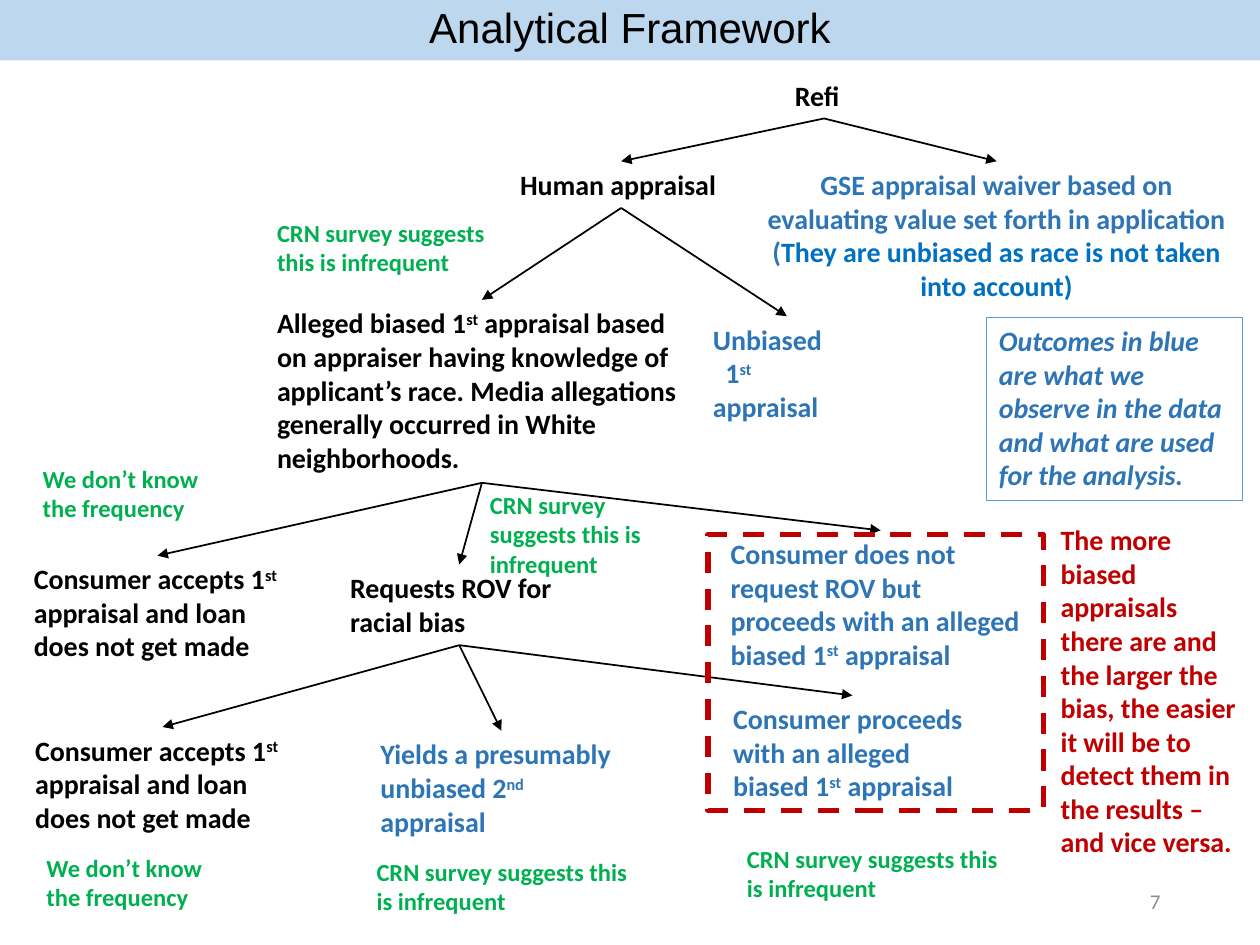
from lxml.etree import SubElement
from pptx import Presentation
from pptx.dml.color import RGBColor
from pptx.enum.dml import MSO_LINE
from pptx.enum.shapes import MSO_CONNECTOR, MSO_SHAPE
from pptx.enum.text import MSO_ANCHOR, MSO_AUTO_SIZE, PP_ALIGN
from pptx.oxml.ns import qn
from pptx.util import Inches, Pt

# Content. The grid has 100 columns and 75 rows of 0.1 inch.
COLUMNS, ROWS, CELL = 100, 75, 0.1
COLORS = {
    "band": "BDD7EE", "black": "000000", "blue": "2E75B6", "bright": "0070C0",
    "green": "00B050", "red": "C00000", "edge": "5B9BD5", "grey": "8C8C8C",
}
TITLE = "Analytical Framework"
PAGE_NUMBER = "7"

# name: (column, row, width, lines, color, text); ^...^ marks a raised ending
OUTCOMES = {
    "refi": (62.1, 5.7, 6.6, 1, "black", "Refi"),
    "human": (40.3, 12.8, 18, 1, "black", "Human appraisal"),
    "unbiased": (55.6, 25.1, 13.7, 2, "blue", "Unbiased\n1^st^\nappraisal"),
    "biased": (21, 23.8, 34.5, 5, "black",
               "Alleged biased 1^st^ appraisal based on appraiser having knowledge of "
               "applicant’s race. Media allegations generally occurred in White neighborhoods."),
    "accepts first": (1.7, 44.1, 21.6, 3, "black",
                      "Consumer accepts 1^st^ appraisal and loan does not get made"),
    "requests": (26.8, 44.8, 19.3, 2, "black", "Requests ROV for racial bias"),
    "no request": (57, 42.1, 25.8, 4, "blue",
                   "Consumer does not request ROV but proceeds with an alleged "
                   "biased 1^st^ appraisal"),
    "accepts after": (1.8, 57.7, 22.2, 3, "black",
                      "Consumer accepts 1^st^ appraisal and loan does not get made"),
    "second": (29.2, 58, 21.2, 3, "blue", "Yields a presumably unbiased 2^nd^ appraisal"),
    "proceeds": (57.2, 55.2, 20.9, 3, "blue",
                 "Consumer proceeds with an alleged biased 1^st^ appraisal"),
}
WAIVER = (59.6, 12.8, 39, 4, "blue",
          "GSE appraisal waiver based on evaluating value set forth in application\n"
          "(^They are unbiased as race is not taken into account)^")
BRANCHES = {
    "refi": ["human", "waiver"],
    "human": ["unbiased", "biased"],
    "biased": ["accepts first", "requests", "no request"],
    "requests": ["accepts after", "second", "proceeds"],
}
INFREQUENT = "CRN survey suggests this is infrequent"
UNKNOWN = "We don’t know the frequency"
# (column, row, width, lines, text)
FREQUENCY_NOTES = [
    (21, 16.8, 21.2, 2, INFREQUENT), (2.4, 36.3, 16.4, 2, UNKNOWN),
    (37.9, 38.4, 16, 3, INFREQUENT), (28.9, 67.5, 22.7, 2, INFREQUENT),
    (2.7, 67.2, 16.4, 2, UNKNOWN), (58.3, 66.5, 22.7, 2, INFREQUENT),
]
LEGEND = (78.3, 25.2, 20.3, 5, "blue",
          "Outcomes in blue are what we observe in the data and what are used for the analysis.")
TAKEAWAY = (83.2, 41, 16, 10, "red",
            "The more biased appraisals there are and the larger the bias, the easier it will be "
            "to detect them in the results – and vice versa.")
BIAS_FRAME = (56.2, 42.4, 26.6, 21.9)

deck = Presentation()
deck.slide_width, deck.slide_height = Inches(COLUMNS * CELL), Inches(ROWS * CELL)
slide = deck.slides.add_slide(deck.slide_layouts[6])


def rgb(name):
    return RGBColor.from_string(COLORS[name])


def grid(*cells):
    return [Inches(cell * CELL) for cell in cells]


def rows_for(lines, size):
    """Rows taken by lines of text plus the top and bottom insets."""
    return 1 + lines * size * 0.169


def write(owner, text, *, color="black", size=16, font="Calibri", bold=True, italic=False,
          align=PP_ALIGN.LEFT, anchor=MSO_ANCHOR.TOP, grow=True, spacing=None,
          marked_color=None, indents=None):
    """Text between ^ marks is raised, or takes marked_color if given."""
    frame = owner.text_frame
    frame.word_wrap = True
    frame.vertical_anchor = anchor
    frame.auto_size = MSO_AUTO_SIZE.SHAPE_TO_FIT_TEXT if grow else MSO_AUTO_SIZE.NONE
    for row, line in enumerate(text.split("\n")):
        paragraph = frame.paragraphs[0] if row == 0 else frame.add_paragraph()
        paragraph.alignment = align
        paragraph.line_spacing = spacing
        if indents and row in indents:
            paragraph._p.get_or_add_pPr().set("indent", str(Inches(indents[row])))
        for place, part in enumerate(line.split("^")):
            if not part:
                continue
            marked = place % 2 == 1
            run = paragraph.add_run()
            run.text = part
            run.font.name, run.font.size = font, Pt(size)
            run.font.bold, run.font.italic = bold, italic
            run.font.color.rgb = rgb(marked_color if marked and marked_color else color)
            if marked and not marked_color:
                run.font._element.set("baseline", "30000")
    return owner


def add_text(column, row, width, lines, color, text, size=16, **style):
    box = slide.shapes.add_textbox(*grid(column, row, width, rows_for(lines, size)))
    return write(box, text, color=color, size=size, **style)


def add_rectangle(cells, fill=None, edge=None, weight=1):
    rectangle = slide.shapes.add_shape(MSO_SHAPE.RECTANGLE, *grid(*cells))
    rectangle.shadow.inherit = False
    if fill:
        rectangle.fill.solid()
        rectangle.fill.fore_color.rgb = rgb(fill)
    else:
        rectangle.fill.background()
    if edge:
        rectangle.line.color.rgb = rgb(edge)
        rectangle.line.width = Pt(weight)
    else:
        rectangle.line.fill.background()
    return rectangle


def add_arrow(parent, child):
    arrow = slide.shapes.add_connector(MSO_CONNECTOR.STRAIGHT, 0, 0, 0, 0)
    arrow.begin_connect(parent, 2)
    arrow.end_connect(child, 0)
    arrow.line.color.rgb = rgb("black")
    arrow.line.width = Pt(1)
    SubElement(arrow.line._get_or_add_ln(), qn("a:tailEnd"), type="triangle")
    SubElement(arrow._element.spPr, qn("a:effectLst"))


# Title band
write(add_rectangle((0, 0, COLUMNS, 4.8), fill="band"), TITLE, size=24, font="Arial",
      bold=False, align=PP_ALIGN.CENTER, anchor=MSO_ANCHOR.MIDDLE, grow=False, spacing=0.9)

# Decision tree
boxes = {name: add_text(*outcome, indents={1: 0.1} if name == "unbiased" else None)
         for name, outcome in OUTCOMES.items()}
boxes["waiver"] = add_text(*WAIVER, align=PP_ALIGN.CENTER, marked_color="bright")
for parent, children in BRANCHES.items():
    for child in children:
        add_arrow(boxes[parent], boxes[child])

# Notes on how frequent each branch is
for column, row, width, lines, text in FREQUENCY_NOTES:
    add_text(column, row, width, lines, "green", text, size=14)

# Legend, framed outcomes and takeaway
column, row, width, lines, color, text = LEGEND
legend = add_rectangle((column, row, width, rows_for(lines, 16)), edge="edge", weight=0.75)
write(legend, text, color=color, italic=True)
bias_frame = add_rectangle(BIAS_FRAME, edge="red", weight=3)
bias_frame.line.dash_style = MSO_LINE.DASH
add_text(*TAKEAWAY)

# Page number
page = slide.shapes.add_textbox(*grid(70.6, 69.5, 22.5, 4))
write(page, PAGE_NUMBER, color="grey", size=12, bold=False, align=PP_ALIGN.RIGHT,
      anchor=MSO_ANCHOR.MIDDLE, grow=False)

deck.save("out.pptx")
